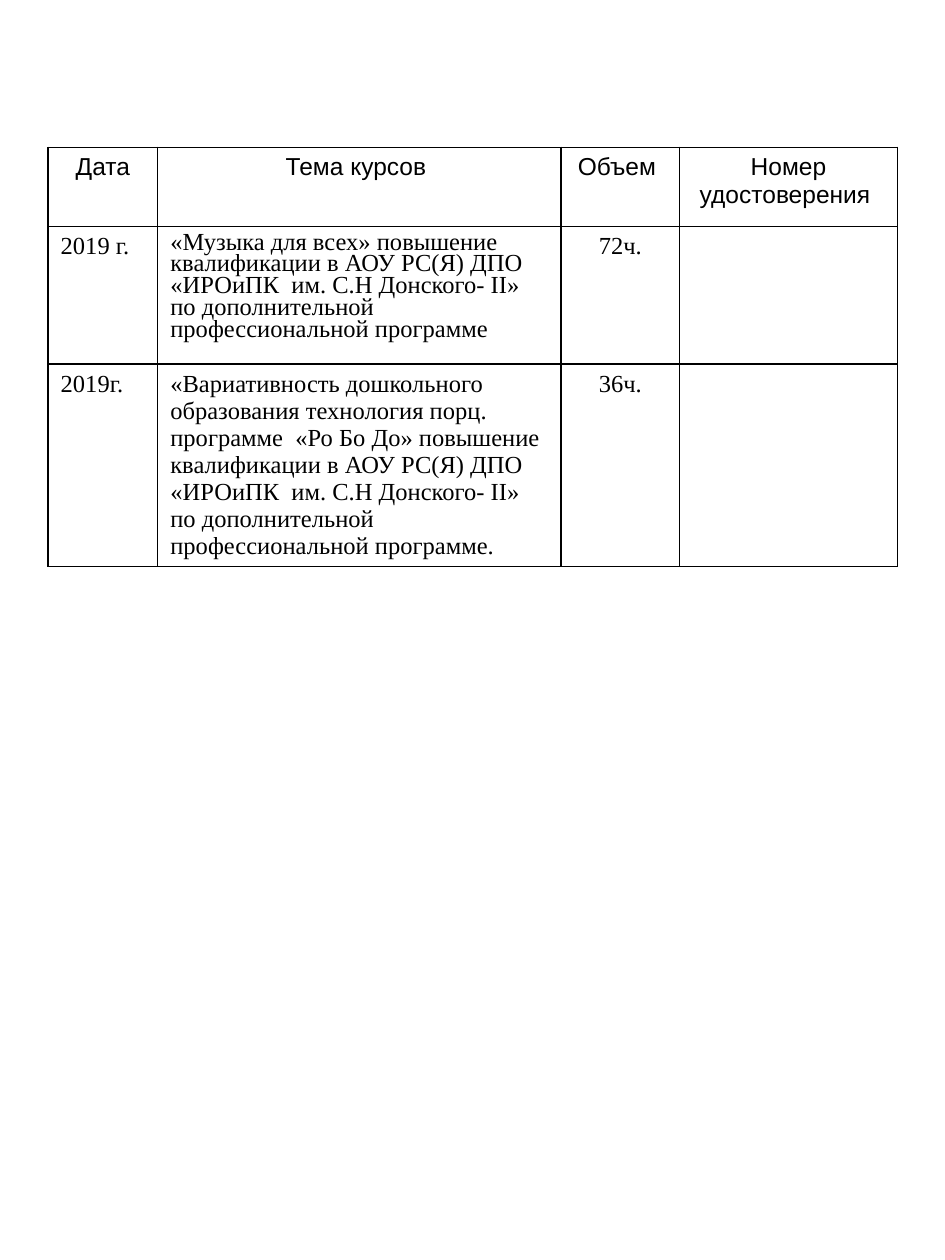
from typing import NamedTuple

from lxml import etree
from pptx import Presentation
from pptx.dml.color import RGBColor
from pptx.enum.text import PP_ALIGN
from pptx.oxml.ns import qn
from pptx.util import Cm, Pt

LEFT = PP_ALIGN.LEFT
MID = PP_ALIGN.CENTER
SANS = "Arial"
SERIF = "Times New Roman"
BLACK = "000000"


class Entry(NamedTuple):
    text: str
    font: str = SERIF
    align: int = LEFT
    space: float = 1.0


COLS = (2.21, 8.13, 2.39, 4.39)
ROWS = (1.6, 2.77, 3.38)
HEADS = ("Дата", "Тема курсов ", "Объем ", "Номер удостоверения ")
PLACE = (
    "повышение квалификации в АОУ РС(Я) ДПО «ИРОиПК  им. С.Н Донского- II» "
    "по дополнительной профессиональной программе"
)
GRID = (
    tuple(Entry(head, SANS, MID) for head in HEADS),
    (
        Entry("2019 г."),
        Entry(f"«Музыка для всех» {PLACE}", space=0.8),
        Entry("72ч.", align=MID),
        Entry(""),
    ),
    (
        Entry("2019г."),
        Entry(
            "«Вариативность дошкольного образования технология порц. "
            f"программе  «Ро Бо До» {PLACE}."
        ),
        Entry("36ч.", align=MID),
        Entry(""),
    ),
)


def color(code: str) -> RGBColor:
    return RGBColor.from_string(code)


def border(cell, code: str, width: float) -> None:
    props = cell._tc.get_or_add_tcPr()
    for side in ("lnL", "lnR", "lnT", "lnB"):
        line = etree.SubElement(props, qn(f"a:{side}"), w=str(Pt(width)))
        fill = etree.SubElement(line, qn("a:solidFill"))
        etree.SubElement(fill, qn("a:srgbClr"), val=code)


def write(cell, entry: Entry) -> None:
    border(cell, BLACK, 1)
    cell.fill.background()
    if not entry.text:
        return
    para = cell.text_frame.paragraphs[0]
    para.alignment = entry.align
    para.line_spacing = entry.space
    run = para.add_run()
    run.text = entry.text
    run.font.name = entry.font
    run.font.size = Pt(14)
    run.font.color.rgb = color(BLACK)


def main() -> None:
    deck = Presentation()
    deck.slide_width = Cm(19.05)
    deck.slide_height = Cm(25.4)
    slide = deck.slides.add_slide(deck.slide_layouts[6])
    frame = slide.shapes.add_table(
        len(ROWS), len(COLS), Cm(0.97), Cm(2.97), Cm(sum(COLS)), Cm(sum(ROWS))
    )
    table = frame.table
    table.first_row = False
    table.horz_banding = False
    for col, width in zip(table.columns, COLS):
        col.width = Cm(width)
    for row, height, entries in zip(table.rows, ROWS, GRID):
        row.height = Cm(height)
        for cell, entry in zip(row.cells, entries):
            write(cell, entry)
    deck.save("out.pptx")


if __name__ == "__main__":
    main()
